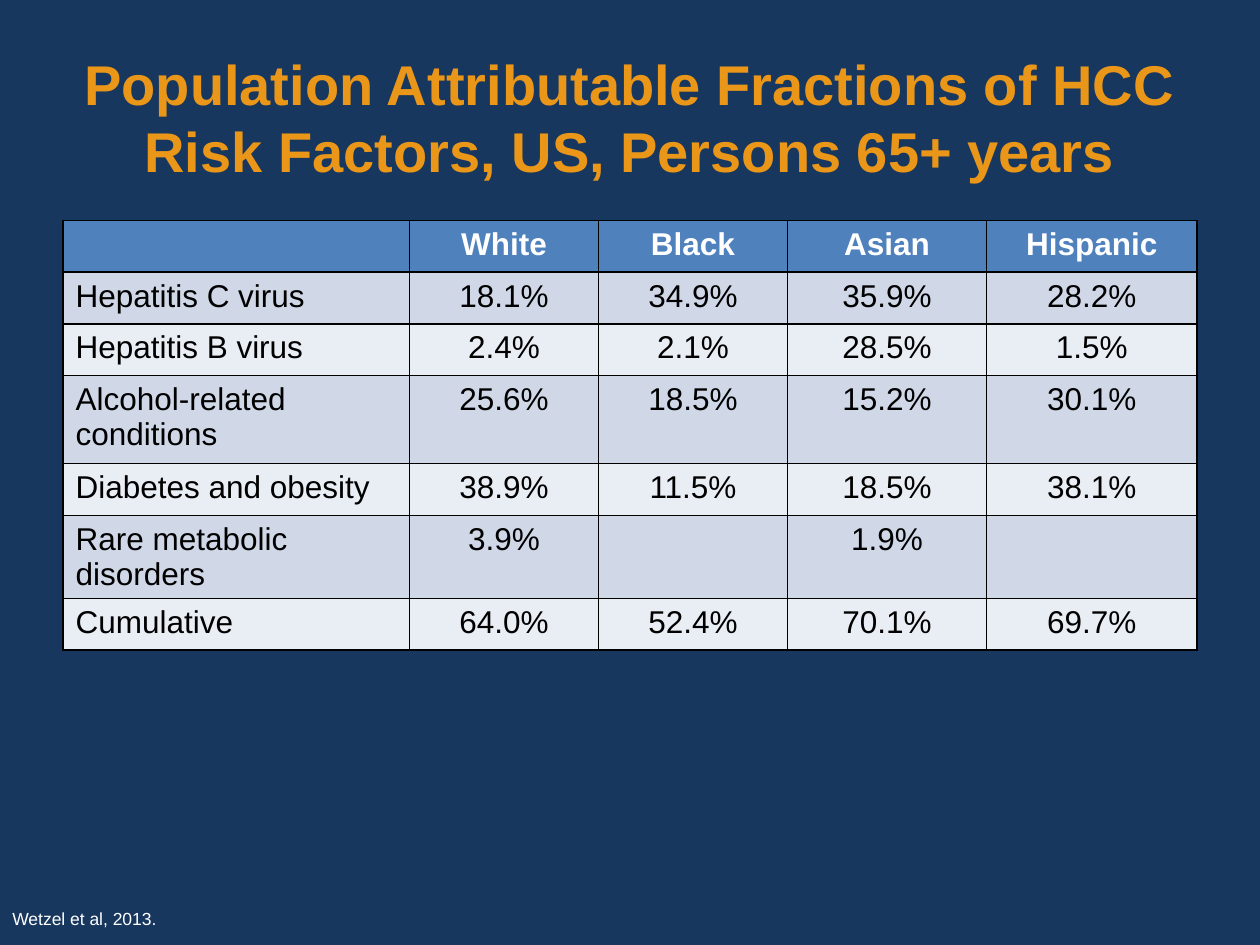
from dataclasses import dataclass

from lxml import etree
from pptx import Presentation
from pptx import util as u
from pptx.dml.color import RGBColor
from pptx.enum import text
from pptx.oxml import ns


@dataclass(frozen=True)
class Theme:
    font: str = "Arial"
    background: str = "17375E"
    title: str = "E99619"
    header: str = "4F81BD"
    bands: tuple = ("D0D8E8", "E9EDF4")
    light: str = "FFFFFF"
    dark: str = "000000"
    title_size: int = 32
    table_size: int = 18
    source_size: int = 10
    border_width: int = 1


THEME = Theme()

TITLE = "Population Attributable Fractions of HCC Risk Factors, US, Persons 65+ years"
SOURCE = "Wetzel et al, 2013."
ROWS = [
    ("", "White", "Black", "Asian", "Hispanic"),
    ("Hepatitis C virus", "18.1%", "34.9%", "35.9%", "28.2%"),
    ("Hepatitis B virus", "2.4%", "2.1%", "28.5%", "1.5%"),
    ("Alcohol-related conditions", "25.6%", "18.5%", "15.2%", "30.1%"),
    ("Diabetes and obesity", "38.9%", "11.5%", "18.5%", "38.1%"),
    ("Rare metabolic disorders", "3.9%", "", "1.9%", ""),
    ("Cumulative", "64.0%", "52.4%", "70.1%", "69.7%"),
]
COLUMN_WIDTHS = (2.75, 1.5, 1.5, 1.58, 1.67)
ROW_HEIGHT = 0.41
TALL_ROWS = {3: 0.7, 5: 0.66}  # rows whose label takes two lines


def set_text(tf, content, size, color, bold=False, align=text.PP_ALIGN.LEFT):
    tf.text = content
    p = tf.paragraphs[0]
    p.alignment = align
    for r in p.runs:
        r.font.name = THEME.font
        r.font.size = u.Pt(size)
        r.font.bold = bold
        r.font.color.rgb = RGBColor.from_string(color)


def set_borders(cell):
    tc_pr = cell._tc.get_or_add_tcPr()
    for i, side in enumerate(("lnL", "lnR", "lnT", "lnB")):
        line = etree.Element(ns.qn(f"a:{side}"), w=str(u.Pt(THEME.border_width)))
        fill = etree.SubElement(line, ns.qn("a:solidFill"))
        etree.SubElement(fill, ns.qn("a:srgbClr"), val=THEME.dark)
        tc_pr.insert(i, line)


def add_title(s):
    sp = s.shapes.title
    sp.left, sp.top = u.Inches(0.5), u.Inches(0.3)
    sp.width, sp.height = u.Inches(9), u.Inches(1.25)
    tf = sp.text_frame
    tf.word_wrap = True
    tf.vertical_anchor = text.MSO_ANCHOR.MIDDLE
    set_text(tf, TITLE, THEME.title_size, THEME.title, True, text.PP_ALIGN.CENTER)


def add_risk_table(s):
    heights = [TALL_ROWS.get(i, ROW_HEIGHT) for i in range(len(ROWS))]
    table = s.shapes.add_table(
        len(ROWS), len(COLUMN_WIDTHS), u.Inches(0.5), u.Inches(1.75),
        u.Inches(sum(COLUMN_WIDTHS)), u.Inches(sum(heights))).table
    for column, width in zip(table.columns, COLUMN_WIDTHS):
        column.width = u.Inches(width)
    for row, height in zip(table.rows, heights):
        row.height = u.Inches(height)

    # Header row first, then alternating bands
    for i, values in enumerate(ROWS):
        header = i == 0
        fill = THEME.header if header else THEME.bands[(i - 1) % 2]
        color = THEME.light if header else THEME.dark
        for j, value in enumerate(values):
            cell = table.cell(i, j)
            cell.fill.solid()
            cell.fill.fore_color.rgb = RGBColor.from_string(fill)
            set_borders(cell)
            align = text.PP_ALIGN.CENTER if j else text.PP_ALIGN.LEFT
            set_text(cell.text_frame, value, THEME.table_size, color, header, align)


def add_source(s):
    sp = s.shapes.add_textbox(u.Inches(0), u.Inches(7.16), u.Inches(6.67), u.Inches(0.27))
    tf = sp.text_frame
    tf.word_wrap = True
    tf.auto_size = text.MSO_AUTO_SIZE.SHAPE_TO_FIT_TEXT
    set_text(tf, SOURCE, THEME.source_size, THEME.light)


def main():
    prs = Presentation()
    prs.slide_width, prs.slide_height = u.Inches(10), u.Inches(7.5)
    s = prs.slides.add_slide(prs.slide_layouts.get_by_name("Title Only"))
    s.background.fill.solid()
    s.background.fill.fore_color.rgb = RGBColor.from_string(THEME.background)
    add_title(s)
    add_risk_table(s)
    add_source(s)
    prs.save("out.pptx")


if __name__ == "__main__":
    main()
